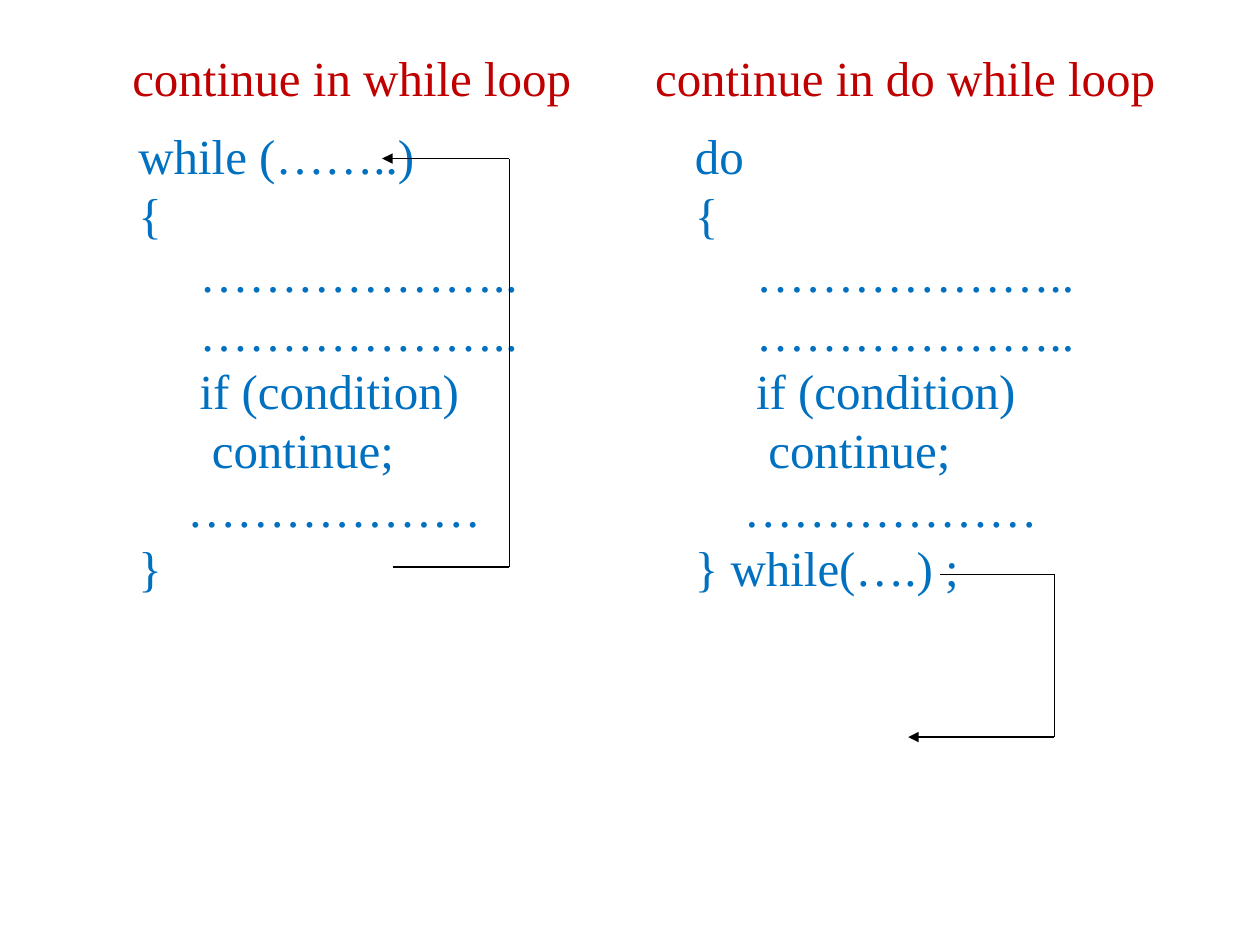
from dataclasses import dataclass
from itertools import pairwise

from lxml.etree import SubElement
from pptx import Presentation
from pptx.dml.color import RGBColor
from pptx.enum.shapes import MSO_CONNECTOR as Connector
from pptx.enum.text import MSO_ANCHOR as Anchor, MSO_AUTO_SIZE as AutoSize, PP_ALIGN as Align
from pptx.oxml.ns import qn
from pptx.util import Inches, Pt


@dataclass(frozen=True)
class Theme:
    """Colours, type sizes and line weights of the slide."""
    font: str = "Times New Roman"
    size: float = 28
    code_leading: float = 33.6
    space: float = 7
    heading: RGBColor = RGBColor(0xC0, 0x00, 0x00)
    code: RGBColor = RGBColor(0x00, 0x70, 0xC0)
    arrow: RGBColor = RGBColor(0x00, 0x00, 0x00)
    arrow_width: float = 0.75


THEME = Theme()
WIDTH, HEIGHT = Inches(10), Inches(7.5)
COLUMNS, ROWS = 120, 90
HEADING_TOP, HEADING_WIDTH, HEADING_HEIGHT = 4.5, 55, 6.25
CODE_TOP, CODE_WIDTH, CODE_HEIGHT = 11.4, 49, 58.5

LOOP_BODY = [
    (0, "{"),
    (5, "……………….."),
    (5, "……………….."),
    (5, "if (condition)"),
    (6, "continue;"),
    (4, "………………"),
]
WHILE_LOOP = [(0, "while (……..)"), *LOOP_BODY, (0, "}")]
DO_WHILE_LOOP = [(0, "do"), *LOOP_BODY, (0, "} while(….) ;")]
BACK_TO_TEST = [(37.4, 54), (48.5, 54), (48.5, 15.1), (36.4, 15.1)]
ON_PAST_LOOP = [(89.5, 54.7), (100.4, 54.7), (100.4, 70.2), (86.5, 70.2)]


def grid(column, row):
    """Turn grid columns and rows into slide lengths."""
    return round(WIDTH * column / COLUMNS), round(HEIGHT * row / ROWS)


def apply_format(target, values):
    """Set every attribute in a dict of format values."""
    for name, value in values.items():
        setattr(target, name, value)


def format_frame(shape, anchor, left_inset=0.1):
    """Give a text shape its insets, wrapping and anchor."""
    frame = shape.text_frame
    apply_format(frame, {
        "word_wrap": True, "auto_size": AutoSize.NONE, "vertical_anchor": anchor,
        "margin_left": Inches(left_inset), "margin_right": Inches(0.1),
        "margin_top": Inches(0.05), "margin_bottom": Inches(0.05),
    })
    return frame


def write(paragraph, text, color, layout):
    """Write one run in the theme font with its paragraph layout."""
    apply_format(paragraph, layout)
    run = paragraph.add_run()
    run.text = text
    apply_format(run.font, {"name": THEME.font, "size": Pt(THEME.size), "bold": False})
    run.font.color.rgb = color


def format_heading(shape, column, text, left_inset=0.1):
    """Place a loop heading on the heading row."""
    left, top = grid(column, HEADING_TOP)
    width, height = grid(HEADING_WIDTH, HEADING_HEIGHT)
    apply_format(shape, {"left": left, "top": top, "width": width, "height": height})
    frame = format_frame(shape, Anchor.BOTTOM, left_inset)
    layout = {"alignment": Align.CENTER, "line_spacing": 1.0, "space_before": Pt(0)}
    write(frame.paragraphs[0], text, THEME.heading, layout)


def add_code(slide, column, lines):
    """Add a code listing with one indented paragraph per line."""
    box = slide.shapes.add_textbox(*grid(column, CODE_TOP), *grid(CODE_WIDTH, CODE_HEIGHT))
    frame = format_frame(box, Anchor.TOP)
    layout = {"alignment": Align.LEFT, "line_spacing": Pt(THEME.code_leading)}
    for index, (indent, text) in enumerate(lines):
        paragraph = frame.add_paragraph() if index else frame.paragraphs[0]
        write(paragraph, text, THEME.code, layout)
        paragraph._p.get_or_add_pPr().set("marL", str(Pt(indent * THEME.space)))


def add_jump(slide, points):
    """Add connectors through the points, with an arrowhead on the last."""
    for start, end in pairwise(points):
        connector = slide.shapes.add_connector(Connector.STRAIGHT, *grid(*start), *grid(*end))
        connector.line.color.rgb = THEME.arrow
        connector.line.width = Pt(THEME.arrow_width)
        properties = connector._element.spPr
        if end == points[-1]:
            SubElement(properties.find(qn("a:ln")), qn("a:tailEnd"), type="triangle")
        SubElement(properties, qn("a:effectLst"))


def main():
    """Build and save the slide."""
    presentation = Presentation()
    apply_format(presentation, {"slide_width": WIDTH, "slide_height": HEIGHT})
    slide = presentation.slides.add_slide(presentation.slide_layouts.get_by_name("Title Only"))
    format_heading(slide.shapes.title, 6, "continue in while loop")
    second_heading = slide.shapes.add_textbox(0, 0, 0, 0)
    format_heading(second_heading, 59, "continue in do while loop", 0.05)
    add_code(slide, 12, WHILE_LOOP)
    add_code(slide, 65, DO_WHILE_LOOP)
    for jump in (BACK_TO_TEST, ON_PAST_LOOP):
        add_jump(slide, jump)
    presentation.save("out.pptx")


if __name__ == "__main__":
    main()
